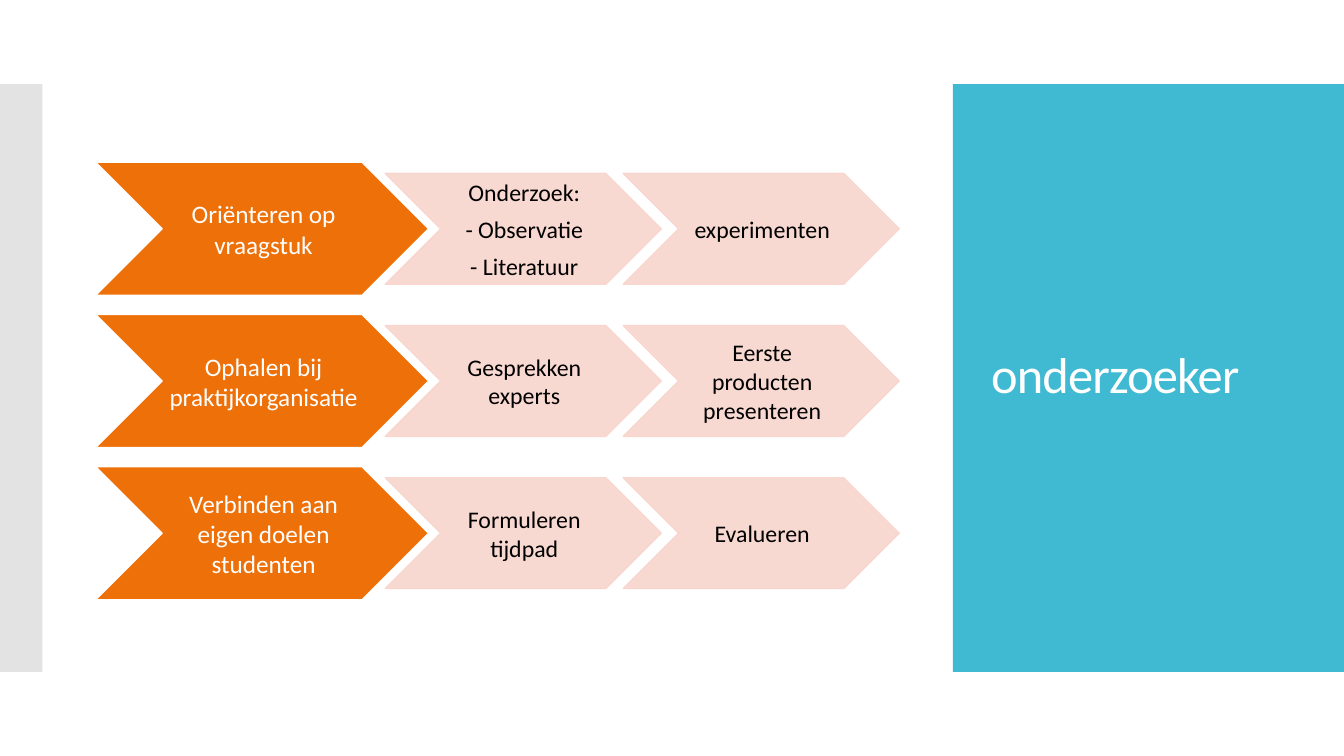
from dataclasses import dataclass

from lxml.etree import SubElement
from pptx import Presentation
from pptx.dml.color import RGBColor
from pptx.dml.fill import FillFormat
from pptx.enum.shapes import MSO_SHAPE
from pptx.enum.text import MSO_ANCHOR, PP_ALIGN
from pptx.oxml.ns import qn
from pptx.shapes.autoshape import Shape
from pptx.shapes.shapetree import GroupShapes
from pptx.slide import Slide
from pptx.text.text import TextFrame
from pptx.util import Inches, Pt

SLIDE_WIDTH, SLIDE_HEIGHT = 13.33, 7.5
BAND_TOP, BAND_HEIGHT = SLIDE_HEIGHT / 9, SLIDE_HEIGHT * 7 / 9
FIRST_ROW_CENTER, ROW_PITCH = 2.27, 1.51
FONT = "Calibri"


@dataclass(frozen=True)
class ChevronStyle:
    width: float
    height: float
    fill: str
    line: str
    opacity: int
    text_color: str
    text_size: int
    left_inset: float


@dataclass(frozen=True)
class Column:
    left: float
    style: ChevronStyle
    texts: tuple[str, ...]


LEAD = ChevronStyle(3.3, 1.32, "EE7008", "FFFFFF", 100, "FFFFFF", 18, 0.03)
STEP = ChevronStyle(2.74, 1.1, "F8D5CC", "F8D5CC", 90, "000000", 17, 0.02)

COLUMNS = (
    Column(0.95, LEAD, (
        "Oriënteren op vraagstuk",
        "Ophalen bij praktijkorganisatie",
        "Verbinden aan eigen doelen studenten",
    )),
    Column(3.82, STEP, (
        "Onderzoek:\n- Observatie\n- Literatuur",
        "Gesprekken experts",
        "Formuleren tijdpad",
    )),
    Column(6.18, STEP, (
        "experimenten",
        "Eerste producten presenteren",
        "Evalueren",
    )),
)


def paint(fill: FillFormat, color: str, opacity: int = 100) -> None:
    """Fill with a hex colour at an opacity in percent."""
    fill.solid()
    fill.fore_color.rgb = RGBColor.from_string(color)
    if opacity < 100:
        color_element = fill._xPr.find(qn("a:solidFill"))[0]
        SubElement(color_element, qn("a:alpha"), val=str(opacity * 1000))


def format_runs(text_frame: TextFrame, size: int, color: str) -> None:
    for paragraph in text_frame.paragraphs:
        for run in paragraph.runs:
            run.font.name = FONT
            run.font.size = Pt(size)
            paint(run.font.fill, color)


def add_band(slide: Slide, left: float, width: float, color: str, opacity: int = 100) -> None:
    band = slide.shapes.add_shape(
        MSO_SHAPE.RECTANGLE,
        Inches(left), Inches(BAND_TOP), Inches(width), Inches(BAND_HEIGHT),
    )
    band.shadow.inherit = False
    band.line.fill.background()
    paint(band.fill, color, opacity)


def add_chevron(shapes: GroupShapes, left: float, center: float, text: str, style: ChevronStyle) -> None:
    chevron = shapes.add_shape(
        MSO_SHAPE.CHEVRON,
        Inches(left), Inches(center - style.height / 2),
        Inches(style.width), Inches(style.height),
    )
    chevron.shadow.inherit = False
    paint(chevron.fill, style.fill, style.opacity)
    chevron.line.width = Pt(0.85)
    paint(chevron.line.fill, style.line, style.opacity)

    text_frame = chevron.text_frame
    text_frame.text = text
    text_frame.word_wrap = True
    text_frame.vertical_anchor = MSO_ANCHOR.MIDDLE
    text_frame.margin_left, text_frame.margin_right = Inches(style.left_inset), 0
    text_frame.margin_top = text_frame.margin_bottom = Inches(0.01)
    for paragraph in text_frame.paragraphs:
        paragraph.alignment = PP_ALIGN.CENTER
        paragraph.space_after = Pt(style.text_size * 0.35)
    format_runs(text_frame, style.text_size, style.text_color)


def place_title(slide: Slide, title: Shape, text: str) -> None:
    """Set the title over the coloured band, in front of it."""
    slide.shapes._spTree.append(title._element)
    title.left, title.top = Inches(9.73), Inches(1.23)
    title.width, title.height = Inches(3.22), Inches(5.03)
    text_frame = title.text_frame
    text_frame.text = text
    text_frame.word_wrap = True
    text_frame.vertical_anchor = MSO_ANCHOR.MIDDLE
    paragraph = text_frame.paragraphs[0]
    paragraph.alignment = PP_ALIGN.LEFT
    paragraph.line_spacing = 0.9
    format_runs(text_frame, 36, "FFFFFF")
    paragraph.runs[0]._r.get_or_add_rPr().set("spc", "-60")


def main() -> None:
    presentation = Presentation()
    presentation.slide_width = Inches(SLIDE_WIDTH)
    presentation.slide_height = Inches(SLIDE_HEIGHT)
    slide = presentation.slides.add_slide(presentation.slide_layouts[5])

    add_band(slide, 9.45, SLIDE_WIDTH - 9.45, "40BAD2")
    place_title(slide, slide.shapes.title, "onderzoeker")
    add_band(slide, 0, 0.42, "C8C8C8", opacity=50)

    process = slide.shapes.add_group_shape()
    for column in COLUMNS:
        for row, text in enumerate(column.texts):
            center = FIRST_ROW_CENTER + row * ROW_PITCH
            add_chevron(process.shapes, column.left, center, text, column.style)

    presentation.save("out.pptx")


if __name__ == "__main__":
    main()
